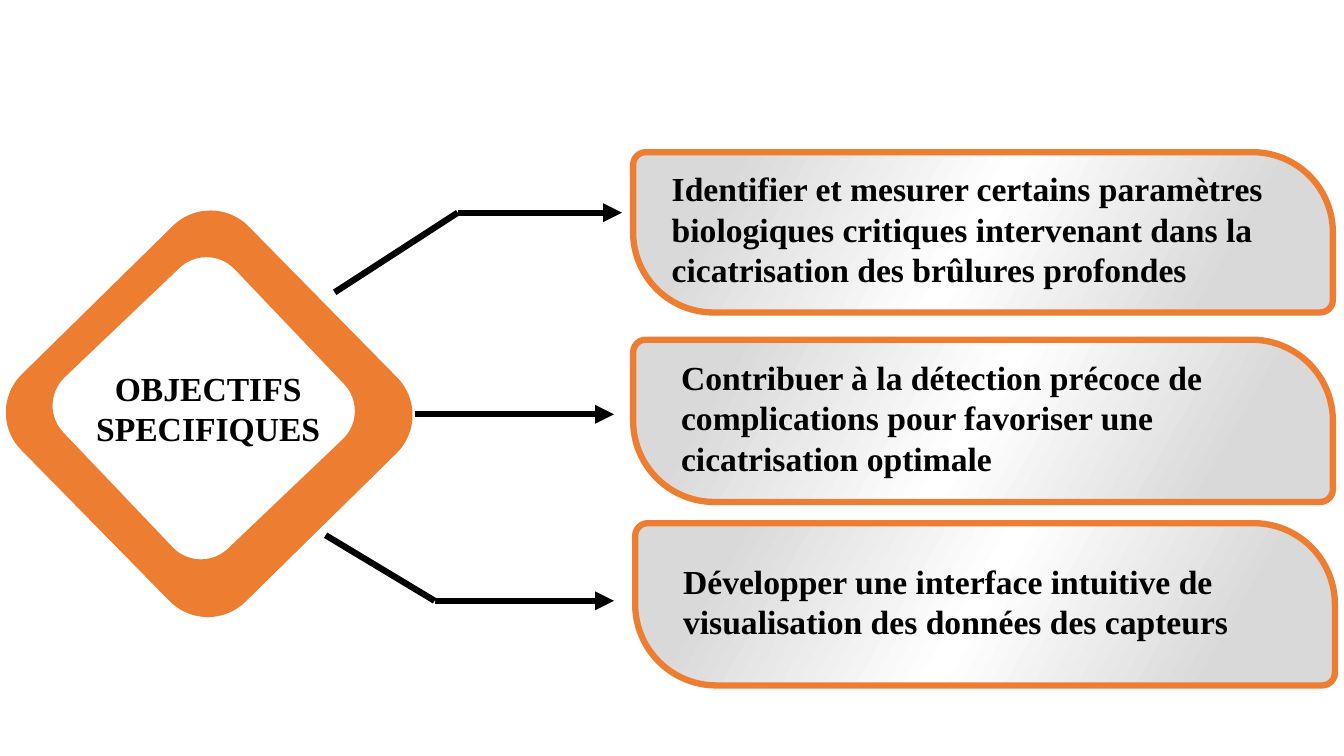
from copy import deepcopy
from dataclasses import dataclass

from pptx import Presentation
from pptx import util as u
from pptx.dml.color import RGBColor
from pptx.enum import shapes, text
from pptx.oxml import ns, xmlchemy


@dataclass(frozen=True)
class Theme:
    font: str = "Times New Roman"
    size: int = 24
    ink: str = "000000"
    edge: str = "ED7D31"
    base: str = "FFFFFF"
    tint: str = "D9D9D9"
    thick: float = 4.5
    thin: float = 1


THEME = Theme()
KIND = shapes.MSO_SHAPE
GOALS = [
    "Identifier et mesurer certains paramètres biologiques critiques intervenant dans la cicatrisation des brûlures profondes",
    "Contribuer à la détection précoce de complications pour favoriser une cicatrisation optimale",
    "Développer une interface intuitive de visualisation des données des capteurs",
]
CARDS = [
    (6.28, 1.51, 6.94, 1.59, 0.15),
    (6.28, 3.37, 6.94, 1.61, 0.24),
    (6.3, 5.19, 6.94, 1.61, 0.24),
]
PATHS = [
    [(3.32, 2.9), (4.54, 2.11), (6.17, 2.11)],
    [(4.12, 4.11), (6.09, 4.11)],
    [(3.23, 5.31), (4.31, 5.96), (6.09, 5.96)],
]


def color(code):
    return RGBColor.from_string(code)


def inches(*vals):
    return [u.Inches(v) for v in vals]


def outline(shape, code, width):
    shape.line.color.rgb = color(code)
    shape.line.width = u.Pt(width)


def write(shape, words, align):
    frame = shape.text_frame
    frame.word_wrap = True
    frame.vertical_anchor = text.MSO_ANCHOR.MIDDLE
    para = frame.paragraphs[0]
    para.text = words
    para.alignment = align
    para.font.name = THEME.font
    para.font.size = u.Pt(THEME.size)
    para.font.bold = True
    para.font.color.rgb = color(THEME.ink)
    return frame


def shade(fill):
    fill.gradient()
    fill.gradient_angle = 150
    first = fill.gradient_stops[0]._gs
    first.addnext(deepcopy(first))
    marks = [(0.16, THEME.tint), (0.51, THEME.base), (0.87, THEME.tint)]
    for stop, (spot, code) in zip(fill.gradient_stops, marks):
        stop.position = spot
        stop.color.rgb = color(code)


def card(slide, box, words):
    *rect, inset = box
    shape = slide.shapes.add_shape(KIND.ROUND_2_DIAG_RECTANGLE, *inches(*rect))
    shape.shadow.inherit = False
    shape.adjustments[0] = 0.078
    shape.adjustments[1] = 0.5
    shade(shape.fill)
    outline(shape, THEME.edge, THEME.thick)
    frame = write(shape, words, text.PP_ALIGN.LEFT)
    frame.margin_left = u.Inches(inset)
    frame.margin_right = frame.margin_top = 0
    frame.margin_bottom = u.Inches(0.07)


def badge(slide, box, words):
    left, top, side = box
    gap = 0.34
    inner = side - 2.32 * gap
    layers = [
        (KIND.ROUNDED_RECTANGLE, left, top, side, 315.5, THEME.edge),
        (KIND.FLOWCHART_ALTERNATE_PROCESS, left + gap, top + gap, inner, 46.4, THEME.base),
    ]
    for kind, x, y, size, turn, code in layers:
        shape = slide.shapes.add_shape(kind, *inches(x, y, size, size))
        shape.shadow.inherit = False
        shape.rotation = turn
        shape.fill.solid()
        shape.fill.fore_color.rgb = color(code)
        outline(shape, THEME.edge, THEME.thin)
    label = slide.shapes.add_textbox(*inches(left - 0.04, top + 1.06, side + 0.06, 0.91))
    write(label, words, text.PP_ALIGN.CENTER)


def arrow(slide, points):
    for start, end in zip(points, points[1:]):
        line = slide.shapes.add_connector(
            shapes.MSO_CONNECTOR.STRAIGHT, *inches(*start, *end))
        outline(line, THEME.ink, THEME.thick)
        line._element.spPr.append(xmlchemy.OxmlElement("a:effectLst"))
    head = xmlchemy.OxmlElement("a:tailEnd")
    head.set("type", "triangle")
    line._element.spPr.find(ns.qn("a:ln")).append(head)


def main():
    deck = Presentation()
    deck.slide_width, deck.slide_height = inches(13.33, 7.5)
    slide = deck.slides.add_slide(deck.slide_layouts[6])
    for points in PATHS:
        arrow(slide, points)
    badge(slide, (0.5, 2.53, 3.15), "OBJECTIFS SPECIFIQUES")
    for box, words in zip(CARDS, GOALS):
        card(slide, box, words)
    deck.save("out.pptx")


if __name__ == "__main__":
    main()
